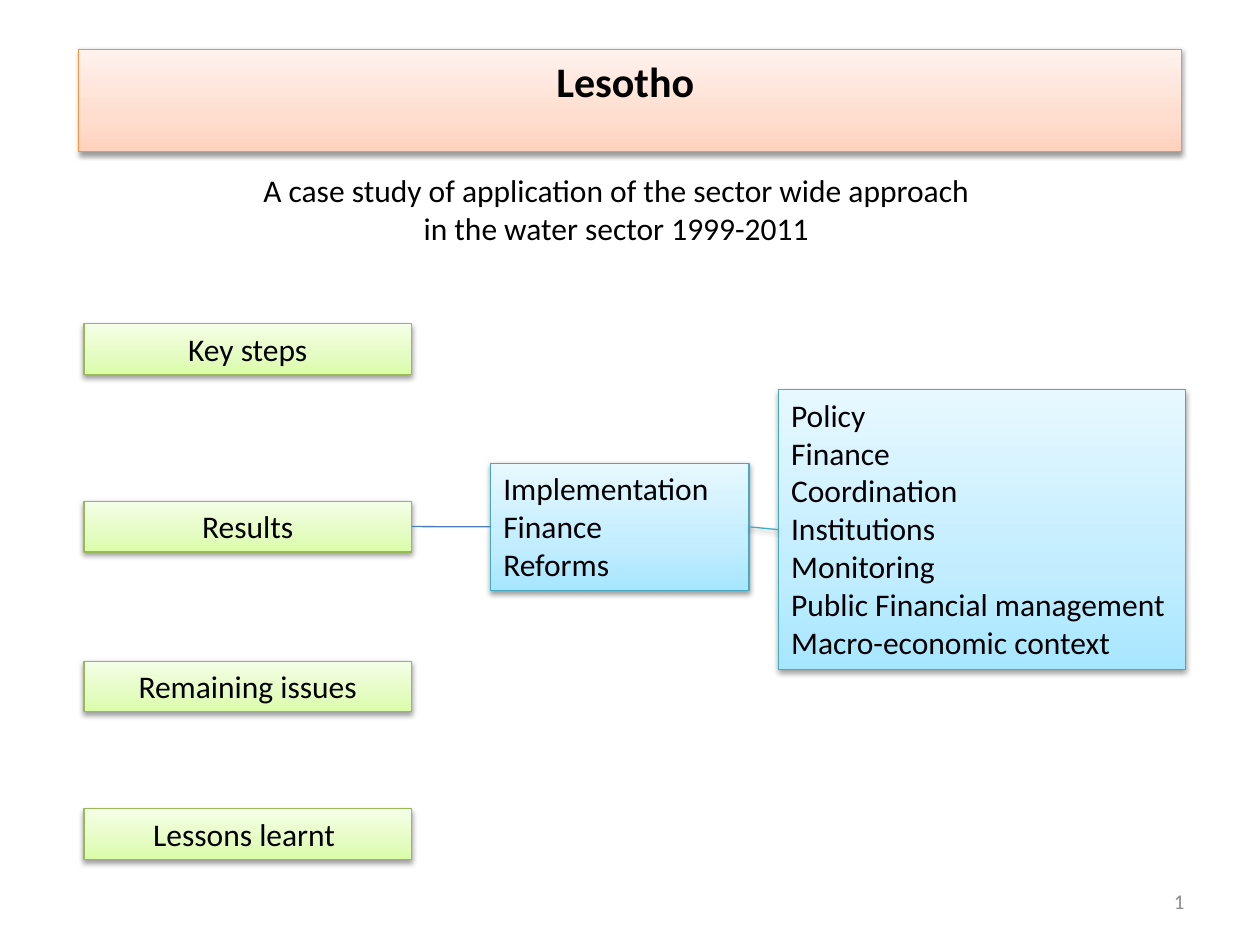
import copy

import pptx
import pptx.util
import pptx.dml.color
import pptx.enum.shapes
import pptx.enum.text
import pptx.oxml
import pptx.oxml.ns
from pptx.util import Pt

COLORS = {"text": "000000", "number": "8C8C8C", "link": "4B7EBC"}
# Each theme: outline, then gradient from bottom to top
THEMES = {
    "orange": ("F69240", ("FFD2BD", "FFDED0", "FFF2ED")),
    "green": ("98B955", ("DAFDA7", "E4FCC2", "F5FFE7")),
    "blue": ("46AAC5", ("A7E6FF", "C1EDFF", "E7F8FF")),
}
SHADOW = (
    '<a:effectLst xmlns:a="http://schemas.openxmlformats.org/drawingml/2006/main">{}</a:effectLst>'
)
SOFT_SHADOW = SHADOW.format(
    '<a:outerShdw blurRad="40000" dist="20000" dir="5400000" rotWithShape="0">'
    '<a:srgbClr val="000000"><a:alpha val="38000"/></a:srgbClr></a:outerShdw>'
)
ALIGN = pptx.enum.text.PP_ALIGN
ANCHOR = pptx.enum.text.MSO_ANCHOR
rgb = pptx.dml.color.RGBColor.from_string


def write(box, lines, size=18, color="text", bold=False, align=ALIGN.LEFT, anchor=ANCHOR.TOP):
    frame = box.text_frame
    frame.word_wrap = True
    frame.auto_size = pptx.enum.text.MSO_AUTO_SIZE.NONE
    frame.vertical_anchor = anchor
    frame.text = "\n".join(lines)
    for para in frame.paragraphs:
        para.alignment = align
        for span in para.runs:
            span.font.name = "Calibri"
            span.font.size = Pt(size)
            span.font.bold = bold
            span.font.color.rgb = rgb(COLORS[color])


def decorate(box, theme):
    outline, shades = THEMES[theme]
    box.line.color.rgb = rgb(outline)
    box.line.width = Pt(0.75)
    box.fill.gradient()
    box.fill.gradient_angle = 90
    stop_list = box._element.spPr.find(".//" + pptx.oxml.ns.qn("a:gsLst"))
    stop_list.insert(1, copy.deepcopy(stop_list[0]))
    for stop, position, shade in zip(box.fill.gradient_stops, (0, 0.35, 1), shades):
        stop.position = position
        stop.color.rgb = rgb(shade)
    box._element.spPr.append(pptx.oxml.parse_xml(SOFT_SHADOW))


deck = pptx.Presentation()
deck.slide_width, deck.slide_height = Pt(720), Pt(540)
page = deck.slides.add_slide(deck.slide_layouts[5])
RECTANGLE = pptx.enum.shapes.MSO_SHAPE.RECTANGLE

# Title banner
title = page.shapes.title
title.left, title.top, title.width, title.height = Pt(45), Pt(28.2), Pt(630), Pt(58.3)
write(title, ["Lesotho "], size=24, bold=True, align=ALIGN.CENTER)
decorate(title, "orange")

# Topics in the left column, details to the right
panels = {}
for name, theme, left, top, width, height, lines in (
    ("steps", "green", 48, 185, 187.2, 29, ["Key steps"]),
    ("results", "green", 48, 286.4, 187.2, 29, ["Results"]),
    ("issues", "green", 48, 377.8, 187.2, 29, ["Remaining issues"]),
    ("lessons", "green", 48, 462.2, 187.2, 29, ["Lessons learnt "]),
    ("areas", "blue", 280.5, 264.7, 147.5, 72.7, ["Implementation", "Finance", "Reforms"]),
    ("context", "blue", 445, 222.7, 232.5, 160, [
        "Policy", "Finance", "Coordination", "Institutions", "Monitoring",
        "Public Financial management", "Macro-economic context"]),
):
    panel = page.shapes.add_shape(RECTANGLE, Pt(left), Pt(top), Pt(width), Pt(height))
    write(panel, lines, align=ALIGN.CENTER if theme == "green" else ALIGN.LEFT)
    decorate(panel, theme)
    panels[name] = panel

# Links between the panels
for start, start_side, end, end_side, color, effect in (
    ("results", 3, "areas", 1, COLORS["link"], SHADOW.format("")),
    ("context", 1, "areas", 3, THEMES["blue"][0], SOFT_SHADOW),
):
    link = page.shapes.add_connector(pptx.enum.shapes.MSO_CONNECTOR.STRAIGHT, 0, 0, 0, 0)
    link.begin_connect(panels[start], start_side)
    link.end_connect(panels[end], end_side)
    link.line.color.rgb = rgb(color)
    link.line.width = Pt(0.75)
    link._element.spPr.append(pptx.oxml.parse_xml(effect))

# Subtitle
subtitle = page.shapes.add_textbox(Pt(42.5), Pt(94.3), Pt(623.5), Pt(72.7))
write(subtitle, ["A case study of application of the sector wide approach ",
                 "in the water sector 1999-2011 "], align=ALIGN.CENTER)

# Page number
number = page.shapes.add_textbox(Pt(516), Pt(500.5), Pt(168), Pt(28.8))
write(number, ["1"], size=12, color="number", align=ALIGN.RIGHT, anchor=ANCHOR.MIDDLE)

deck.save("out.pptx")
